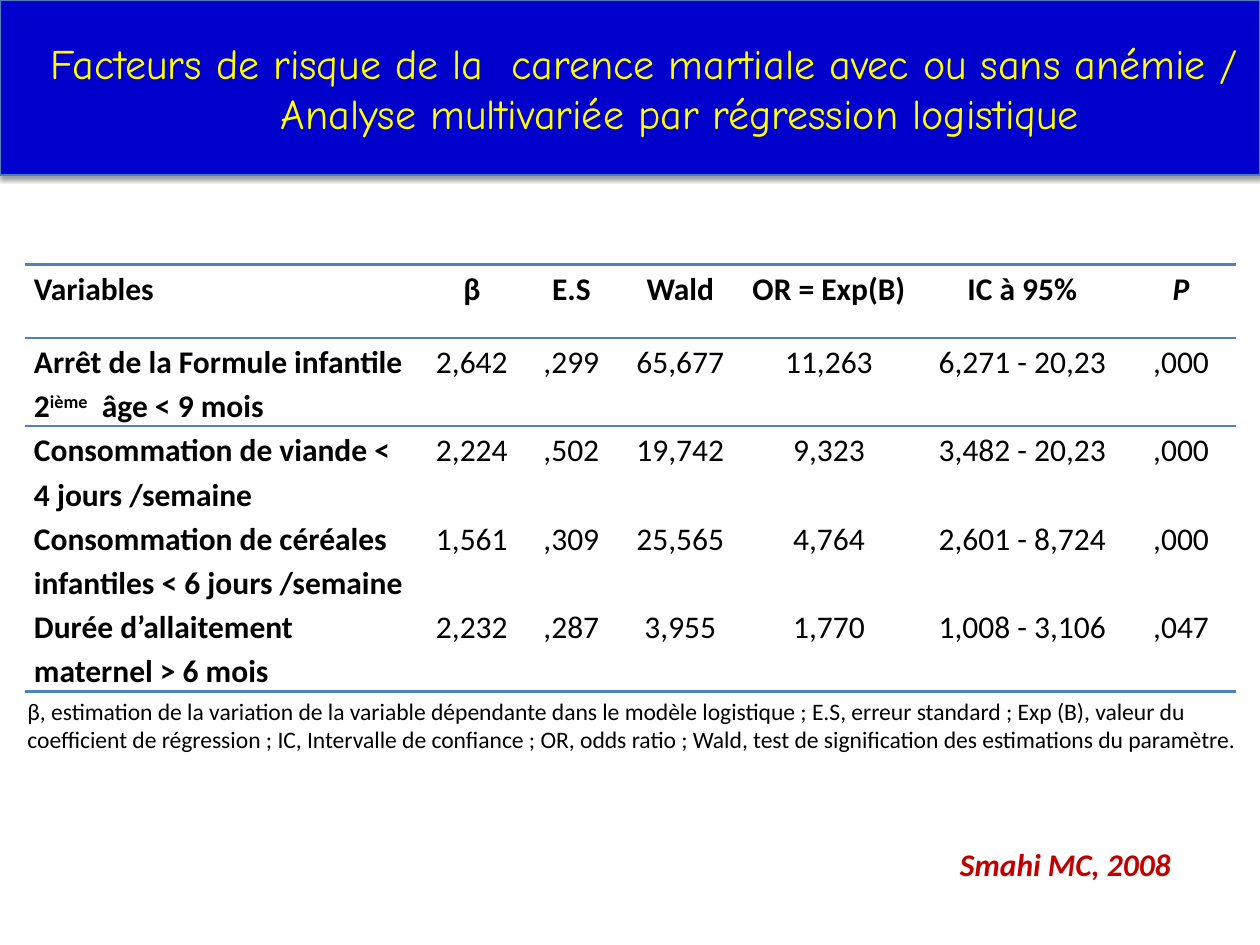
import pptx
import pptx.dml.color
import pptx.enum.shapes
import pptx.enum.text
import pptx.oxml
import pptx.oxml.ns
import pptx.util
from pptx.util import Inches

COLORS = {
    "banner": "0000CC",
    "banner_line": "4B7EBC",
    "title": "FFFF00",
    "rule": "4F81BD",
    "text": "000000",
    "citation": "C00000",
}
NO_TABLE_STYLE = "{2D5ABB26-0587-4C30-8999-92F81FD0307C}"
CENTER = pptx.enum.text.PP_ALIGN.CENTER
LEFT = pptx.enum.text.PP_ALIGN.LEFT
MIDDLE = pptx.enum.text.MSO_ANCHOR.MIDDLE

COLUMN_WIDTHS = [3.15, 0.79, 0.79, 0.94, 1.42, 1.65, 0.87]
ROW_HEIGHT = 0.58
ROWS = [
    ["Variables", "β", "E.S", "Wald", "OR = Exp(B)", "IC à 95%", "P"],
    [["Arrêt de la Formule infantile 2", "ième", "  âge < 9 mois"],
     "2,642", ",299", "65,677", "11,263", "6,271 - 20,23", ",000"],
    ["Consommation de viande < 4 jours /semaine",
     "2,224", ",502", "19,742", "9,323", "3,482 - 20,23", ",000"],
    ["Consommation de céréales infantiles < 6 jours /semaine",
     "1,561", ",309", "25,565", "4,764", "2,601 - 8,724", ",000"],
    ["Durée d’allaitement maternel > 6 mois",
     "2,232", ",287", "3,955", "1,770", "1,008 - 3,106", ",047"],
]


def color(name):
    return pptx.dml.color.RGBColor.from_string(COLORS[name])


def add_xml(parent, xml):
    namespace = pptx.oxml.ns.nsdecls("a")
    parent.append(pptx.oxml.parse_xml(xml.replace(" ", f" {namespace} ", 1)))


class SlideBuilder:
    def __init__(self, slide, font="Calibri", title_font="Comic Neue"):
        self.slide = slide
        self.font = font
        self.title_font = title_font

    def format_run(self, run, size, color_name, bold=False, italic=False, font=None):
        run.font.name = font or self.font
        run.font.size = pptx.util.Pt(size)
        run.font.bold = bold
        run.font.italic = italic
        run.font.color.rgb = color(color_name)

    def banner(self, text, width, height):
        box = self.slide.shapes.add_shape(
            pptx.enum.shapes.MSO_SHAPE.RECTANGLE, 0, 0, Inches(width), Inches(height))
        box.fill.solid()
        box.fill.fore_color.rgb = color("banner")
        box.line.color.rgb = color("banner_line")
        box.line.width = pptx.util.Pt(0.75)
        box.shadow.inherit = False
        effects = box.element.spPr.find(pptx.oxml.ns.qn("a:effectLst"))
        add_xml(effects, '<a:outerShdw blurRad="40000" dist="20000" dir="5400000" '
                         'rotWithShape="0"><a:srgbClr val="000000">'
                         '<a:alpha val="38000"/></a:srgbClr></a:outerShdw>')
        frame = box.text_frame
        frame.word_wrap = True
        frame.vertical_anchor = MIDDLE
        frame.text = text
        para = frame.paragraphs[0]
        para.alignment = CENTER
        properties = para._p.get_or_add_pPr()
        properties.set("marL", str(Inches(0.79)))
        properties.set("indent", str(Inches(-0.56)))
        self.format_run(para.runs[0], 24, "title", font=self.title_font)

    def text(self, text, left, top, width, height, size, color_name,
             emphasis=False, anchor=None):
        box = self.slide.shapes.add_textbox(
            Inches(left), Inches(top), Inches(width), Inches(height))
        frame = box.text_frame
        frame.word_wrap = True
        frame.auto_size = pptx.enum.text.MSO_AUTO_SIZE.SHAPE_TO_FIT_TEXT
        frame.vertical_anchor = anchor
        frame.text = text
        self.format_run(frame.paragraphs[0].runs[0], size, color_name, emphasis, emphasis)

    def cell(self, cell, content, bold, italic, alignment, ruled_sides):
        """Fill a cell; a list as content has its second part raised."""
        cell.margin_left = cell.margin_right = Inches(0.07)
        cell.margin_top = cell.margin_bottom = 0
        para = cell.text_frame.paragraphs[0]
        para.alignment = alignment
        para.line_spacing = 1.15
        parts = content if isinstance(content, list) else [content]
        for index, part in enumerate(parts):
            run = para.add_run()
            run.text = part
            self.format_run(run, 18, "text", bold, italic)
            if index == 1:
                run.font._element.set("baseline", "30000")
        for side in ruled_sides:
            add_xml(cell._tc.get_or_add_tcPr(),
                    f'<a:ln{side} w="{pptx.util.Pt(1.5)}"><a:solidFill>'
                    f'<a:srgbClr val="{COLORS["rule"]}"/></a:solidFill></a:ln{side}>')
        cell.fill.background()

    def table(self, rows, left, top, widths, row_height):
        table = self.slide.shapes.add_table(
            len(rows), len(widths), Inches(left), Inches(top),
            Inches(sum(widths)), Inches(row_height * len(rows))).table
        table.first_row = table.horz_banding = False
        table._tbl.tblPr.find(pptx.oxml.ns.qn("a:tableStyleId")).text = NO_TABLE_STYLE
        for column, width in zip(table.columns, widths):
            column.width = Inches(width)
        ruled_sides = {0: "TB", 1: "T", len(rows) - 1: "B"}
        for row_index, row in enumerate(rows):
            table.rows[row_index].height = Inches(row_height)
            for column_index, content in enumerate(row):
                self.cell(
                    table.cell(row_index, column_index), content,
                    bold=row_index == 0 or column_index == 0,
                    italic=content == "P",
                    alignment=CENTER if column_index else LEFT,
                    ruled_sides=ruled_sides.get(row_index, ""))


def main():
    deck = pptx.Presentation()
    deck.slide_width = Inches(10)
    deck.slide_height = Inches(7.5)
    page = SlideBuilder(deck.slides.add_slide(deck.slide_layouts[6]))
    page.banner("Facteurs de risque de la  carence martiale avec ou sans anémie / "
                "Analyse multivariée par régression logistique", 10, 1.39)
    page.table(ROWS, 0.2, 2.1, COLUMN_WIDTHS, ROW_HEIGHT)
    page.text("β, estimation de la variation de la variable dépendante dans le modèle "
              "logistique ; E.S, erreur standard ; Exp (B), valeur du coefficient de "
              "régression ; IC, Intervalle de confiance ; OR, odds ratio ; Wald, test de "
              "signification des estimations du paramètre.",
              0.12, 5.48, 10, 0.56, 13.5, "text")
    page.text("Smahi MC, 2008", 7.52, 6.66, 2.28, 0.4, 18, "citation",
              emphasis=True, anchor=MIDDLE)
    deck.save("out.pptx")


if __name__ == "__main__":
    main()
